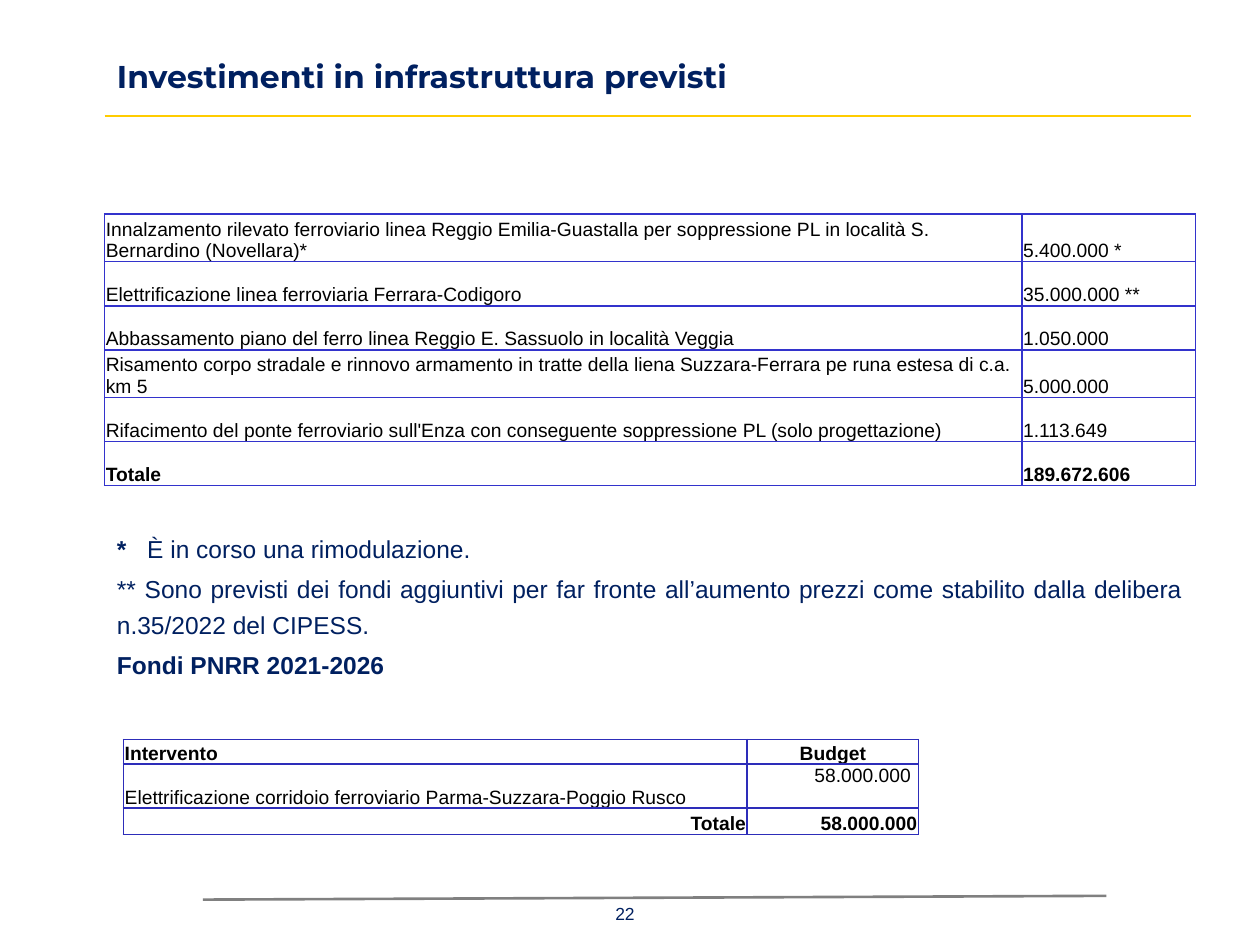
from lxml.etree import SubElement
from pptx import Presentation
from pptx.dml.color import RGBColor
from pptx.enum.shapes import MSO_CONNECTOR
from pptx.enum.text import MSO_ANCHOR, PP_ALIGN
from pptx.oxml.ns import qn
from pptx.util import Inches, Pt

NAVY, BLACK = "002060", "000000"
LEFT, WIDTH = 0.83, 8.66
L, C, R, J = PP_ALIGN.LEFT, PP_ALIGN.CENTER, PP_ALIGN.RIGHT, PP_ALIGN.JUSTIFY
TOP, MIDDLE, BOTTOM = MSO_ANCHOR.TOP, MSO_ANCHOR.MIDDLE, MSO_ANCHOR.BOTTOM

# Content
TITLE = "Investimenti in infrastruttura previsti"
PAGE = "22"
WORKS = [
    ("Innalzamento rilevato ferroviario linea Reggio Emilia-Guastalla per "
     "soppressione PL in località S. Bernardino (Novellara)*", "5.400.000 *"),
    ("Elettrificazione linea ferroviaria Ferrara-Codigoro", "35.000.000 **"),
    ("Abbassamento piano del ferro linea Reggio E. Sassuolo in località Veggia", "1.050.000"),
    ("Risamento corpo stradale e rinnovo armamento in tratte della liena "
     "Suzzara-Ferrara pe runa estesa di c.a. km 5", "5.000.000"),
    ("Rifacimento del ponte ferroviario sull'Enza con conseguente "
     "soppressione PL (solo progettazione)", "1.113.649"),
    ("Totale", "189.672.606"),
]
# Each note is a list of (text, bold) runs
NOTES = [
    [("*", True), ("\tÈ in corso una rimodulazione.", False)],
    [("** Sono previsti dei fondi aggiuntivi per far fronte all’aumento prezzi "
      "come stabilito dalla delibera n.35/2022 del CIPESS.", False)],
    [("Fondi PNRR 2021-2026", True)],
]
PNRR = [
    ("Intervento", "Budget"),
    ("Elettrificazione corridoio ferroviario Parma-Suzzara-Poggio Rusco", "58.000.000"),
    ("Totale", "58.000.000"),
]


def rgb(color):
    return RGBColor.from_string(color)


def write(p, text, size=11, color=BLACK, bold=False, font="Arial", align=L):
    p.alignment = align
    r = p.add_run()
    r.text = text
    r.font.size, r.font.bold, r.font.name = Pt(size), bold, font
    r.font.color.rgb = rgb(color)


def add_box(s, x, y, w, h, anchor=MIDDLE):
    tf = s.shapes.add_textbox(Inches(x), Inches(y), Inches(w), Inches(h)).text_frame
    tf.word_wrap = True
    tf.vertical_anchor = anchor
    return tf


def add_rule(s, x1, y1, x2, y2, color):
    line = s.shapes.add_connector(MSO_CONNECTOR.STRAIGHT, Inches(x1), Inches(y1),
                                  Inches(x2), Inches(y2))
    line.line.color.rgb = rgb(color)
    line.line.width = Pt(1.5)
    SubElement(line._element.spPr, qn("a:effectLst"))


def set_borders(cell, color):
    tcPr = cell._tc.get_or_add_tcPr()
    for i, side in enumerate(("lnL", "lnR", "lnT", "lnB")):
        ln = SubElement(tcPr, qn(f"a:{side}"), w=str(Pt(1)))
        fill = SubElement(ln, qn("a:solidFill"))
        SubElement(fill, qn("a:srgbClr"), val=color)
        tcPr.remove(ln)
        tcPr.insert(i, ln)


def add_grid(s, x, y, cols, heights, rows, border, bold_rows, aligns):
    """Draw a two-column table; aligns overrides left alignment by (row, column)."""
    table = s.shapes.add_table(len(rows), len(cols), Inches(x), Inches(y),
                               Inches(sum(cols)), Inches(sum(heights))).table
    table.first_row = table.horz_banding = False
    for col, w in zip(table.columns, cols):
        col.width = Inches(w)
    for i, (row, h) in enumerate(zip(rows, heights)):
        table.rows[i].height = Inches(h)
        for j, text in enumerate(row):
            cell = table.cell(i, j)
            cell.fill.background()
            cell.margin_left = cell.margin_right = cell.margin_top = Inches(0.01)
            cell.margin_bottom = 0
            cell.vertical_anchor = BOTTOM
            set_borders(cell, border)
            write(cell.text_frame.paragraphs[0], text, bold=i in bold_rows,
                  align=aligns.get((i, j), L))
    return table


prs = Presentation()
prs.slide_width, prs.slide_height = Inches(10), Inches(7.5)
s = prs.slides.add_slide(prs.slide_layouts[6])

# Footer and title
write(add_box(s, 3.92, 7, 2.08, 0.5).paragraphs[0], PAGE, size=10, color=NAVY, align=C)
add_rule(s, 1.61, 7.14, 8.78, 7.11, "808080")
add_rule(s, LEFT, 0.92, 9.45, 0.92, "FFCC00")
write(add_box(s, LEFT, 0.28, WIDTH, 0.64).paragraphs[0], TITLE,
      size=18, color=NAVY, bold=True, font="Montserrat")

# Notes between the two tables
tf = add_box(s, LEFT, 4.14, WIDTH, 1.35, TOP)
for i, runs in enumerate(NOTES):
    p = tf.paragraphs[0] if i == 0 else tf.add_paragraph()
    p.line_spacing = 1.2
    p.space_before = Pt(3 if i else 0)
    if i == 0:
        tabs = SubElement(p._p.get_or_add_pPr(), qn("a:tabLst"))
        SubElement(tabs, qn("a:tab"), pos=str(Inches(0.24)), algn="l")
    for text, bold in runs:
        write(p, text, size=14, color=NAVY, bold=bold, align=J)

# Tables
add_grid(s, LEFT, 1.7, (7.28, 1.38), [0.37] + [0.35] * 5, WORKS, "3333CC", {5}, {})
pnrr = add_grid(s, 0.98, 5.87, (4.95, 1.36), (0.18, 0.35, 0.21), PNRR, "2D2DB9", {0, 2},
                {(0, 1): C, (1, 1): R, (2, 0): R, (2, 1): R})
budget = pnrr.cell(1, 1)
budget.vertical_anchor = TOP
budget.margin_right = Inches(0.06)

prs.save("out.pptx")
